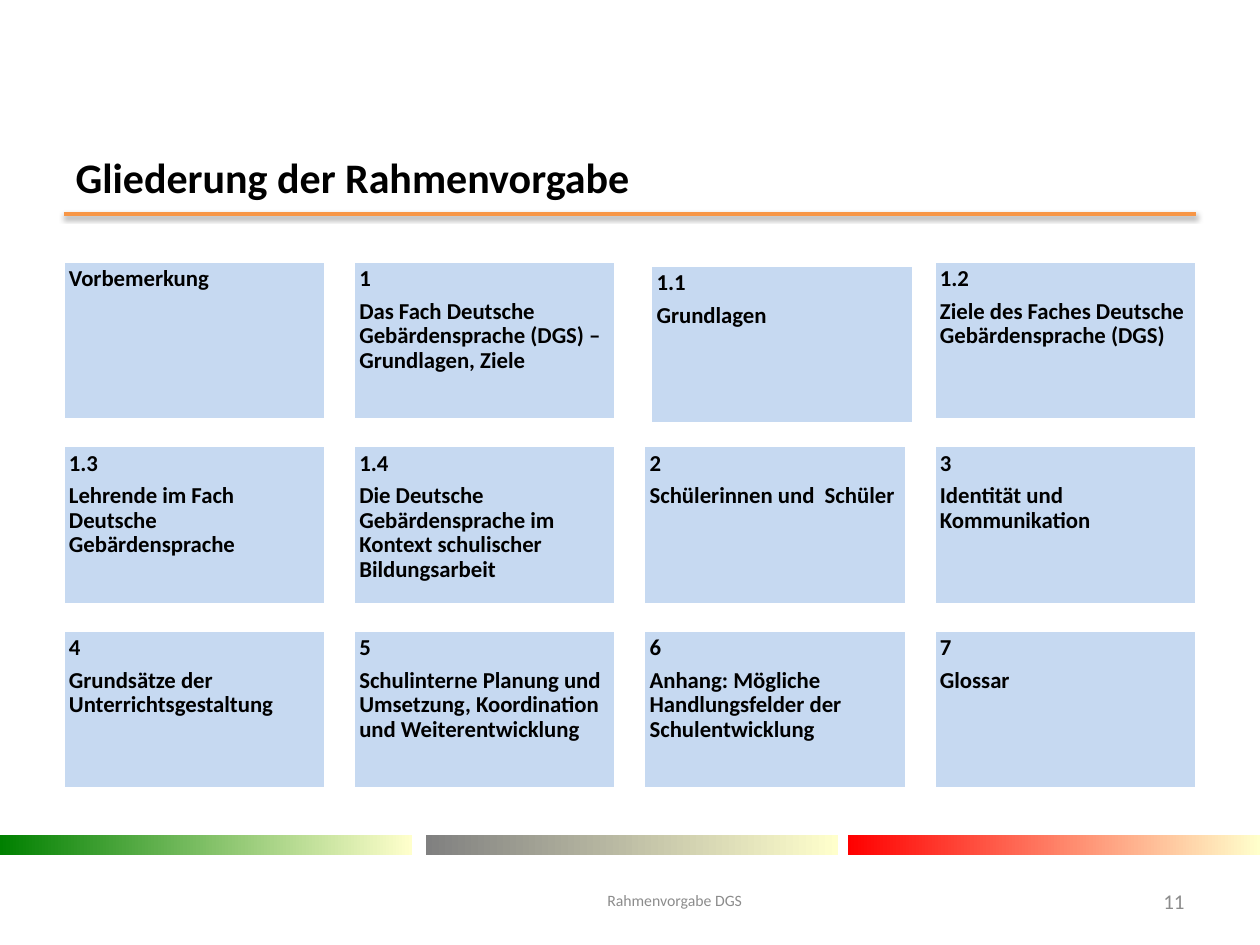
from lxml import etree
from pptx import Presentation
from pptx.dml.color import RGBColor
from pptx.enum.shapes import MSO_CONNECTOR, MSO_SHAPE
from pptx.enum.text import MSO_ANCHOR, MSO_AUTO_SIZE, PP_ALIGN
from pptx.oxml import parse_xml
from pptx.oxml.ns import nsdecls
from pptx.util import Pt

TITLE = "Gliederung der Rahmenvorgabe"
FOOTER = "Rahmenvorgabe DGS"
PAGE_NUMBER = "11"
CARDS = [
    ["Vorbemerkung"],
    ["1", "Das Fach Deutsche Gebärdensprache (DGS) – Grundlagen, Ziele"],
    ["1.1", "Grundlagen"],
    ["1.2", "Ziele des Faches Deutsche Gebärdensprache (DGS)"],
    ["1.3", "Lehrende im Fach Deutsche Gebärdensprache"],
    ["1.4", "Die Deutsche Gebärdensprache im Kontext schulischer Bildungsarbeit"],
    ["2", "Schülerinnen und  Schüler"],
    ["3", "Identität und Kommunikation"],
    ["4", "Grundsätze der Unterrichtsgestaltung"],
    ["5", "Schulinterne Planung und Umsetzung, Koordination und Weiterentwicklung"],
    ["6", "Anhang: Mögliche Handlungsfelder der Schulentwicklung"],
    ["7", "Glossar"],
]
NUDGED_CARDS = {"1.1": (7, 4)}  # card number: shift right and down

BLACK = RGBColor(0x00, 0x00, 0x00)
WHITE = RGBColor(0xFF, 0xFF, 0xFF)
GREY = RGBColor(0x8C, 0x8C, 0x8C)
ORANGE = RGBColor(0xF7, 0x96, 0x46)
LIGHT_BLUE = RGBColor(0xC6, 0xD9, 0xF1)
CREAM = RGBColor(0xFF, 0xFF, 0xCC)
BANDS = [  # left edge, colour that fades to cream
    (0, RGBColor(0x00, 0x80, 0x00)),
    (426, RGBColor(0x80, 0x80, 0x80)),
    (848, RGBColor(0xFF, 0x00, 0x00)),
]

FONT = "Calibri"
LEFT, CENTER, RIGHT = PP_ALIGN.LEFT, PP_ALIGN.CENTER, PP_ALIGN.RIGHT
TOP, MIDDLE = MSO_ANCHOR.TOP, MSO_ANCHOR.MIDDLE
RECTANGLE = MSO_SHAPE.RECTANGLE

SLIDE_WIDTH, SLIDE_HEIGHT = 1260, 945
COLUMNS, ROWS = 4, 3
GRID_LEFT, GRID_TOP, GRID_RIGHT, GRID_BOTTOM = 63, 261, 1197, 789
CARD_WIDTH, CARD_HEIGHT = 263, 159
COLUMN_STEP = (GRID_RIGHT - GRID_LEFT - CARD_WIDTH) / (COLUMNS - 1)
ROW_STEP = (GRID_BOTTOM - GRID_TOP - CARD_HEIGHT) / (ROWS - 1)


def px(*lengths):
    """Turn pixels (126 to the inch) into a list of EMU."""
    return [round(length * 914400 / 126) for length in lengths]


def write_text(shape, lines, size, color=BLACK, bold=False, align=LEFT,
               anchor=MIDDLE, spacing=0.9, after=0, inset=None):
    frame = shape.text_frame
    frame.word_wrap = True
    frame.auto_size = MSO_AUTO_SIZE.NONE
    frame.vertical_anchor = anchor
    if inset is not None:
        margin, = px(inset)
        frame.margin_left = frame.margin_right = margin
        frame.margin_top = frame.margin_bottom = margin
    for index, line in enumerate(lines):
        paragraph = frame.add_paragraph() if index else frame.paragraphs[0]
        paragraph.text = line
        paragraph.alignment = align
        paragraph.line_spacing = spacing
        paragraph.space_after = Pt(after)
        font = paragraph.font
        font.name, font.size, font.bold = FONT, Pt(size), bold
        font.color.rgb = color


def add_title_rule(slide):
    rule = slide.shapes.add_connector(MSO_CONNECTOR.STRAIGHT, *px(64, 214, 1196, 214))
    rule.line.color.rgb = ORANGE
    rule.line.width = Pt(2)
    effects = parse_xml(f"<a:effectLst {nsdecls('a')}/>")
    shadow = etree.SubElement(effects, effects.tag.replace("effectLst", "outerShdw"),
                              blurRad="40000", dist="20000", dir="5400000", rotWithShape="0")
    shadow.append(parse_xml(
        f'<a:srgbClr {nsdecls("a")} val="000000"><a:alpha val="38000"/></a:srgbClr>'))
    rule._element.spPr.append(effects)


def add_band(slide, left, color):
    band = slide.shapes.add_shape(RECTANGLE, *px(left, 835, 412, 20))
    band.shadow.inherit = False
    band.line.fill.background()
    band.fill.gradient()
    band.fill.gradient_angle = 0
    for stop, position, stop_color in zip(band.fill.gradient_stops, (0, 1), (color, CREAM)):
        stop.position = position
        stop.color.rgb = stop_color


def add_card(slide, index, lines):
    row, column = divmod(index, COLUMNS)
    shift_right, shift_down = NUDGED_CARDS.get(lines[0], (0, 0))
    left = GRID_LEFT + column * COLUMN_STEP + shift_right
    top = GRID_TOP + row * ROW_STEP + shift_down
    card = slide.shapes.add_shape(RECTANGLE, *px(left, top, CARD_WIDTH, CARD_HEIGHT))
    card.shadow.inherit = False
    card.fill.solid()
    card.fill.fore_color.rgb = LIGHT_BLUE
    card.line.color.rgb = WHITE
    card.line.width = Pt(2)
    write_text(card, lines, 13, bold=True, anchor=TOP, after=4.5, inset=6)


def main():
    presentation = Presentation()
    presentation.slide_width, presentation.slide_height = px(SLIDE_WIDTH, SLIDE_HEIGHT)
    slide = presentation.slides.add_slide(presentation.slide_layouts[5])

    add_title_rule(slide)
    for left, color in BANDS:
        add_band(slide, left, color)

    title = slide.shapes.title
    title.left, title.top, title.width, title.height = px(63, 155, 1134, 49)
    write_text(title, [TITLE], 24, bold=True)

    footer = slide.shapes.add_textbox(*px(471, 876, 407, 50))
    write_text(footer, [FOOTER], 9, color=GREY, align=CENTER, after=6)
    number = slide.shapes.add_textbox(*px(1116, 876, 81, 50))
    write_text(number, [PAGE_NUMBER], 12, color=GREY, align=RIGHT, spacing=1.0, after=6)

    for index, lines in enumerate(CARDS):
        add_card(slide, index, lines)
    presentation.save("out.pptx")


if __name__ == "__main__":
    main()
